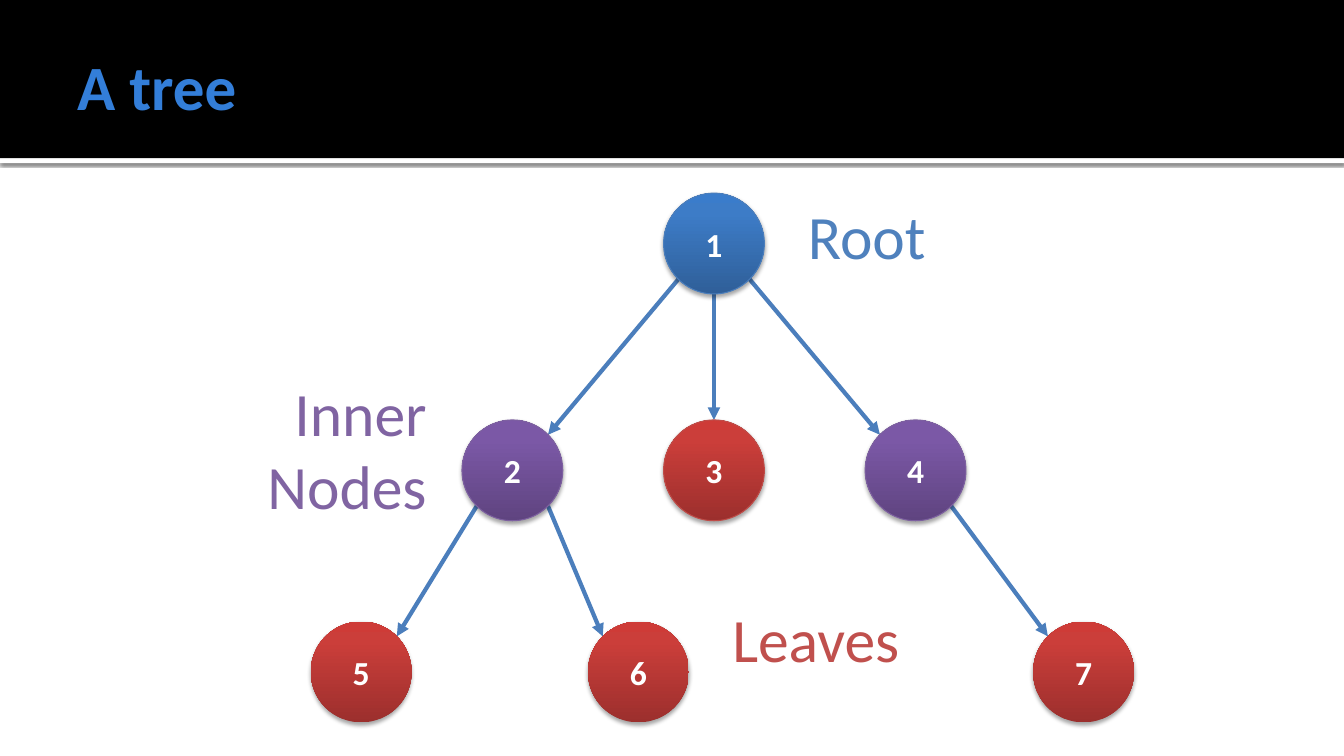
from math import cos, radians, sin

from lxml.etree import SubElement
from pptx import Presentation
from pptx.dml.color import RGBColor
from pptx.enum.shapes import MSO_CONNECTOR, MSO_SHAPE
from pptx.enum.text import MSO_ANCHOR as Anchor, MSO_AUTO_SIZE as AutoSize, PP_ALIGN as Align
from pptx.oxml.ns import qn
from pptx.util import Pt

WIDTH, HEIGHT = 960, 540
DIAMETER = 72
COLORS = {
    "white": "FFFFFF", "black": "000000", "title": "337ED9", "edge": "4B7EBC",
    "root": "4F81BD", "inner": "8064A2", "leaf": "C0504D",
    "root line": "4B7EBC", "inner line": "7D60A0", "leaf line": "BF4C48",
}
# Gradient stops from the bottom of a node to its top, at 0, 80 and 100 percent
GRADIENTS = {
    "root": ("2F5F99", "3D7CC7", "3A7CCB"),
    "inner": ("5F4480", "7B58A6", "7C57A8"),
    "leaf": ("9C2F2D", "CB3E3A", "CE3B37"),
}
# number: (kind, left, top, has outline), within the tree's box
NODES = {
    1: ("root", 252, 0, True),
    2: ("inner", 108, 162, True),
    3: ("leaf", 252, 162, True),
    4: ("inner", 396, 162, True),
    5: ("leaf", 0, 306, False),
    6: ("leaf", 198, 306, False),
    7: ("leaf", 516, 306, False),
}
EDGES = [(1, 3), (1, 2), (2, 5), (2, 6), (1, 4), (4, 7)]
# text, kind, alignment, box within the tree's box
LABELS = [
    ("Root", "root", Align.LEFT, (348, 0, 138, 60)),
    ("Inner Nodes", "inner", Align.RIGHT, (-48, 126, 138, 114)),
    ("Leaves", "leaf", Align.LEFT, (294, 288, 150, 60)),
]


def color(name):
    return RGBColor.from_string(COLORS[name])


def write(shape, text, size, fill, bold=False, align=Align.LEFT, anchor=Anchor.TOP):
    frame = shape.text_frame
    frame.word_wrap = True
    frame.vertical_anchor = anchor
    para = frame.paragraphs[0]
    para.alignment = align
    span = para.add_run()
    span.text = text
    font = span.font
    font.name, font.size, font.bold = "Calibri", Pt(size), bold
    font.color.rgb = color(fill)
    return frame


def add_shadow(shape, blur, distance, opacity):
    shape.shadow.inherit = False
    effects = shape.element.spPr.find(qn("a:effectLst"))
    shadow = SubElement(effects, qn("a:outerShdw"), blurRad=str(Pt(blur)),
                        dist=str(Pt(distance)), dir="5400000", rotWithShape="0")
    tone = SubElement(shadow, qn("a:srgbClr"), val=COLORS["black"])
    SubElement(tone, qn("a:alpha"), val=str(opacity * 1000))


def add_band(page, left, top, width, height, fill):
    band = page.shapes.add_shape(MSO_SHAPE.RECTANGLE, Pt(left), Pt(top), Pt(width), Pt(height))
    band.shadow.inherit = False
    band.fill.solid()
    band.fill.fore_color.rgb = color(fill)
    band.line.fill.background()
    return band


def add_header(page, left, top, width, height):
    # White rule with a shadow below the black band
    rule = add_band(page, left, top + height, width, 3.6, "white")
    add_shadow(rule, 2.5, 0.8, 60)
    add_band(page, left, top, width, height, "black")

    # Title
    title = page.shapes.add_textbox(Pt(left + 48), Pt(top + 12), Pt(width - 96), Pt(height - 14.4))
    frame = write(title, "A tree", 45, "title", bold=True, anchor=Anchor.MIDDLE)
    frame.margin_left = Pt(7.2)
    frame.margin_right = frame.margin_top = frame.margin_bottom = Pt(3.6)


def add_node(page, number, kind, left, top, outlined):
    node = page.shapes.add_shape(MSO_SHAPE.OVAL, Pt(left), Pt(top), Pt(DIAMETER), Pt(DIAMETER))
    node.fill.gradient()
    node.fill.gradient_angle = 90
    stops = node.element.spPr.find(".//" + qn("a:gsLst"))
    for stop in list(stops):
        stops.remove(stop)
    for position, tone in zip((0, 80, 100), GRADIENTS[kind]):
        stop = SubElement(stops, qn("a:gs"), pos=str(position * 1000))
        SubElement(stop, qn("a:srgbClr"), val=tone)
    if outlined:
        node.line.color.rgb = color(kind + " line")
        node.line.width = Pt(0.75)
    else:
        node.line.fill.background()
    add_shadow(node, 3.1, 1.8, 35)
    write(node, str(number), 24, "white", bold=True, align=Align.CENTER, anchor=Anchor.MIDDLE)
    return node


def rim_point(node, site):
    # An oval has eight connection sites, anticlockwise from the top
    angle = radians(45 * site)
    radius = node.width / 2
    return (round(node.left + radius * (1 - sin(angle))),
            round(node.top + radius * (1 - cos(angle))))


def add_edge(page, parent, child, behind):
    if child.left < parent.left:
        start, end = 3, 7
    elif child.left > parent.left:
        start, end = 5, 1
    else:
        start, end = 4, 0
    edge = page.shapes.add_connector(
        MSO_CONNECTOR.STRAIGHT, *rim_point(parent, start), *rim_point(child, end))
    edge.line.color.rgb = color("edge")
    edge.line.width = Pt(3)
    SubElement(edge.line._get_or_add_ln(), qn("a:tailEnd"), type="triangle")
    SubElement(edge.element.spPr, qn("a:effectLst"))

    # Join the edge to its two nodes
    joints = edge.element.find(".//" + qn("p:cNvCxnSpPr"))
    for tag, node, site in (("a:stCxn", parent, start), ("a:endCxn", child, end)):
        SubElement(joints, qn(tag), id=str(node.shape_id), idx=str(site))
    behind.element.addprevious(edge.element)


def add_tree(page, left, top):
    # Nodes
    nodes = {}
    for number, (kind, x, y, outlined) in NODES.items():
        nodes[number] = add_node(page, number, kind, left + x, top + y, outlined)

    # Arrows, behind the nodes
    for parent, child in EDGES:
        add_edge(page, nodes[parent], nodes[child], behind=nodes[1])

    # Labels
    for text, kind, align, (x, y, width, height) in LABELS:
        label = page.shapes.add_textbox(Pt(left + x), Pt(top + y), Pt(width), Pt(height))
        frame = write(label, text, 44, kind, align=align)
        frame.auto_size = AutoSize.SHAPE_TO_FIT_TEXT


def main():
    deck = Presentation()
    deck.slide_width, deck.slide_height = Pt(WIDTH), Pt(HEIGHT)
    page = deck.slides.add_slide(deck.slide_layouts[6])
    add_header(page, 0, 0, WIDTH, 113)
    add_tree(page, 222, 138)
    deck.save("out.pptx")


if __name__ == "__main__":
    main()
